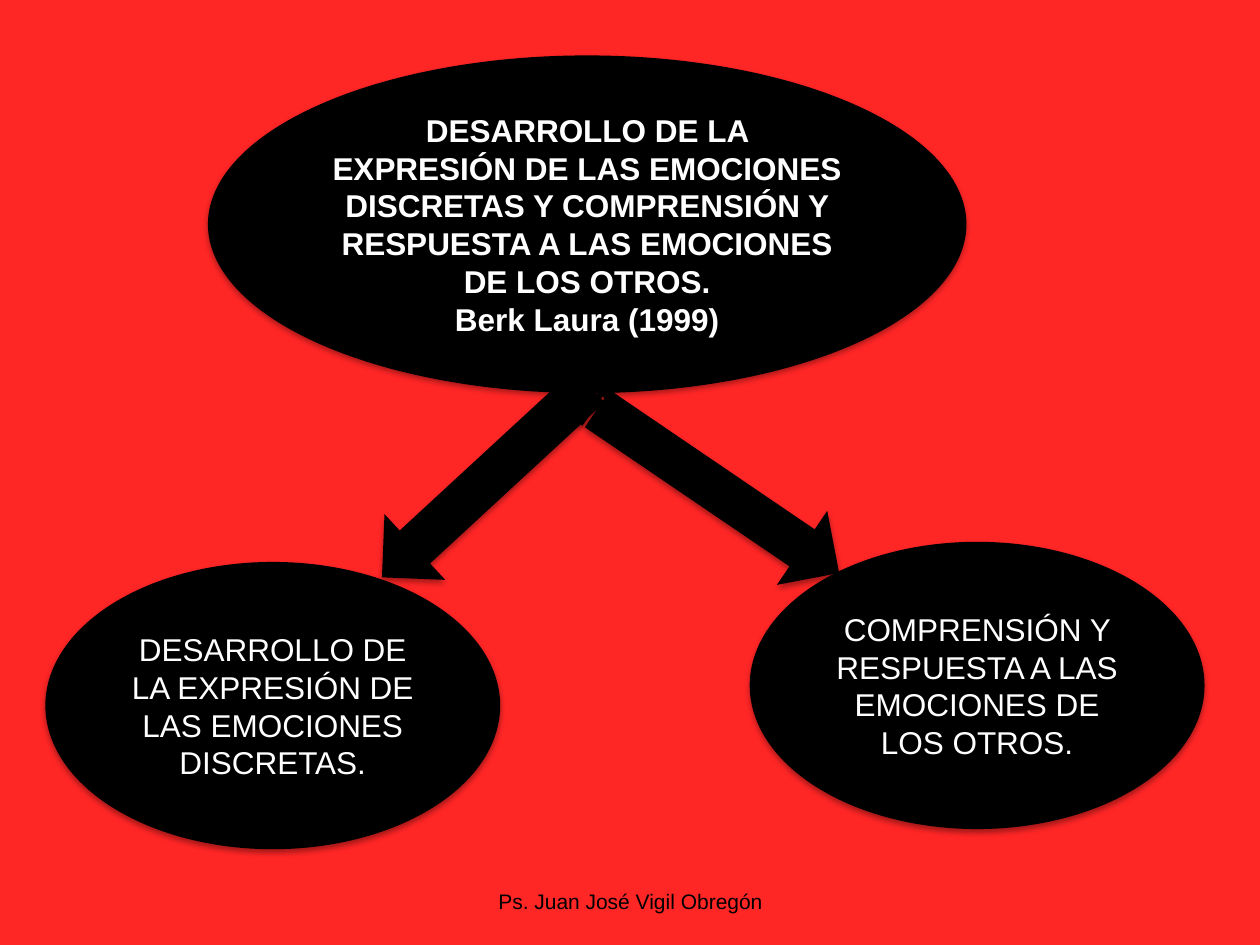
from dataclasses import dataclass

from lxml import etree
from pptx import Presentation
from pptx.dml.color import RGBColor
from pptx.enum.shapes import MSO_SHAPE as Preset
from pptx.enum.text import MSO_ANCHOR as Anchor, PP_ALIGN as Align
from pptx.oxml.ns import qn
from pptx.shapes.autoshape import Shape
from pptx.slide import Slide
from pptx.util import Inches, Pt


@dataclass(frozen=True)
class Theme:
    background: RGBColor = RGBColor(0xFF, 0x26, 0x26)
    dark: RGBColor = RGBColor(0, 0, 0)
    light: RGBColor = RGBColor(0xFF, 0xFF, 0xFF)
    font: str = "Arial"
    body_size: int = 18
    footer_size: int = 12


@dataclass(frozen=True)
class Frame:
    left: float
    top: float
    width: float
    height: float

    def lengths(self) -> list[Inches]:
        return [Inches(n) for n in (self.left, self.top, self.width, self.height)]


@dataclass(frozen=True)
class Bubble:
    frame: Frame
    text: str
    bold: bool = False


@dataclass(frozen=True)
class Arrow:
    frame: Frame
    rotation: float


THEME = Theme()

EXPRESSION = Bubble(Frame(0.36, 4.46, 3.61, 2.28),
                    "DESARROLLO DE LA EXPRESIÓN DE LAS EMOCIONES DISCRETAS.")
COMPREHENSION = Bubble(Frame(5.95, 4.3, 3.61, 2.28),
                       "COMPRENSIÓN Y RESPUESTA A LAS EMOCIONES DE LOS OTROS.")
MAIN_TOPIC = Bubble(Frame(1.65, 0.44, 6.02, 2.68),
                    "DESARROLLO DE LA EXPRESIÓN DE LAS EMOCIONES DISCRETAS Y "
                    "COMPRENSIÓN Y RESPUESTA A LAS EMOCIONES DE LOS OTROS.\n"
                    "Berk Laura (1999)", bold=True)
TO_EXPRESSION = Arrow(Frame(2.72, 3.43, 2.35, 0.71), 137.3)
TO_COMPREHENSION = Arrow(Frame(4.44, 3.51, 2.43, 0.71), 34.2)

# Back to front
DIAGRAM = (EXPRESSION, TO_EXPRESSION, COMPREHENSION, MAIN_TOPIC, TO_COMPREHENSION)


def add_soft_shadow(shape: Shape) -> None:
    shape.shadow.inherit = False
    effects = shape._element.spPr.find(qn("a:effectLst"))
    shadow = etree.SubElement(effects, qn("a:outerShdw"), blurRad=str(Pt(3.1)),
                              dist=str(Pt(1.8)), dir="5400000", rotWithShape="0")
    color = etree.SubElement(shadow, qn("a:srgbClr"), val=str(THEME.dark))
    etree.SubElement(color, qn("a:alpha"), val="35000")


def write_text(box: Shape, text: str, size: int, color: RGBColor,
               bold: bool = False) -> None:
    text_frame = box.text_frame
    text_frame.word_wrap = True
    text_frame.vertical_anchor = Anchor.MIDDLE
    text_frame.text = text
    for para in text_frame.paragraphs:
        para.alignment = Align.CENTER
        for span in para.runs:
            span.font.name = THEME.font
            span.font.size = Pt(size)
            span.font.bold = bold
            span.font.color.rgb = color


def add_dark_shape(page: Slide, preset: Preset, frame: Frame) -> Shape:
    shape = page.shapes.add_shape(preset, *frame.lengths())
    shape.fill.solid()
    shape.fill.fore_color.rgb = THEME.dark
    shape.line.fill.background()
    add_soft_shadow(shape)
    return shape


def draw_bubble(page: Slide, bubble: Bubble) -> None:
    ellipse = add_dark_shape(page, Preset.OVAL, bubble.frame)
    write_text(ellipse, bubble.text, THEME.body_size, THEME.light, bubble.bold)


def draw_arrow(page: Slide, arrow: Arrow) -> None:
    shape = add_dark_shape(page, Preset.STRIPED_RIGHT_ARROW, arrow.frame)
    shape.rotation = arrow.rotation


def main() -> None:
    deck = Presentation()
    deck.slide_width, deck.slide_height = Inches(10), Inches(7.5)
    page = deck.slides.add_slide(deck.slide_layouts[6])
    page.background.fill.solid()
    page.background.fill.fore_color.rgb = THEME.background

    # Topic, its two branches and the arrows between them
    for part in DIAGRAM:
        if isinstance(part, Bubble):
            draw_bubble(page, part)
        else:
            draw_arrow(page, part)

    # Author footer
    footer = page.shapes.add_textbox(*Frame(3.42, 6.95, 3.17, 0.4).lengths())
    write_text(footer, "Ps. Juan José Vigil Obregón", THEME.footer_size, THEME.dark)

    deck.save("out.pptx")


if __name__ == "__main__":
    main()
